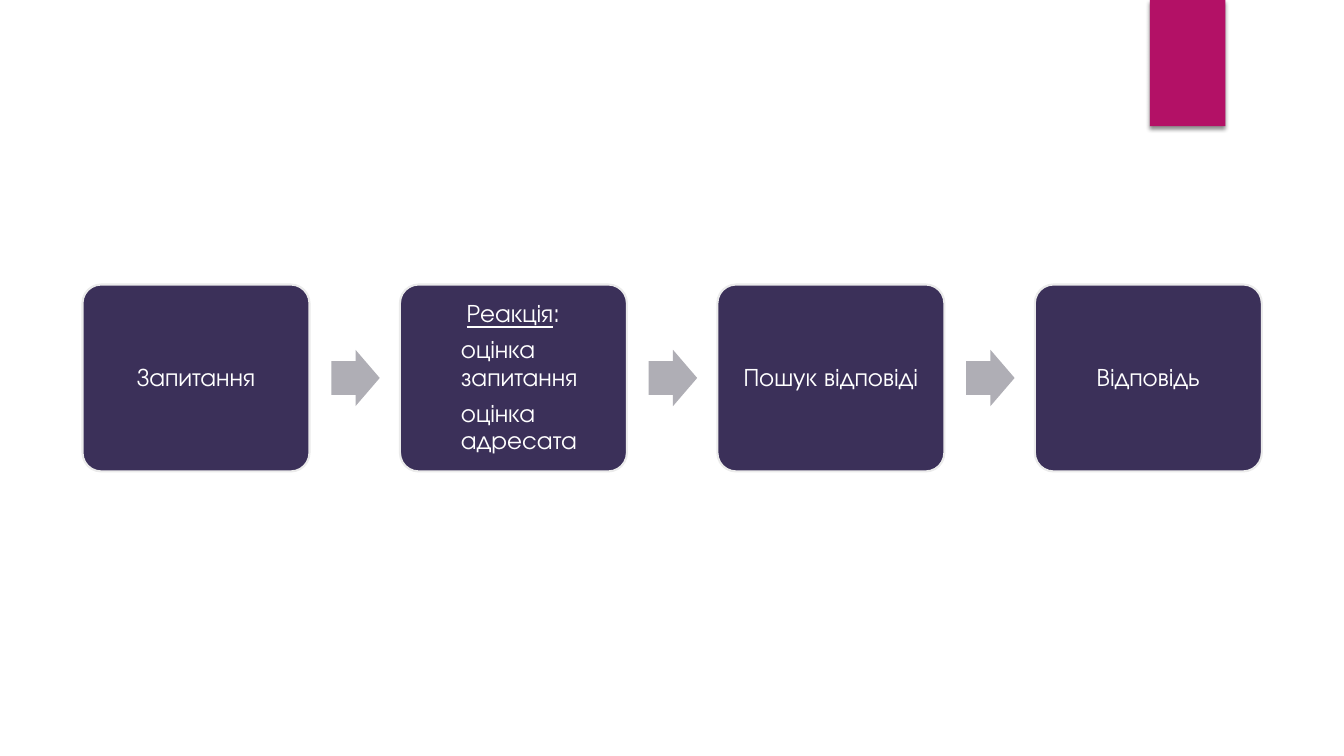
from lxml.etree import SubElement
from pptx import Presentation
from pptx.dml.color import RGBColor
from pptx.enum.shapes import MSO_SHAPE
from pptx.enum.text import MSO_ANCHOR, PP_ALIGN
from pptx.oxml.ns import qn
from pptx.util import Cm, Pt

# Each step: a heading as (text, underlined) runs, then indented lines
STEPS = [
    ([("Запитання", False)], []),
    ([("Реакція", True), (":", False)], ["оцінка запитання", "оцінка адресата"]),
    ([("Пошук відповіді", False)], []),
    ([("Відповідь", False)], []),
]
FONT = "TeX Gyre Adventor"
LEFT, TOP, PITCH = 2.08, 7.17, 8
BOX_W, BOX_H = 5.72, 4.71
ARROW_W, ARROW_H, ARROW_DX = 1.22, 1.42, 6.27


def paint(target, color):
    target.solid()
    target.fore_color.rgb = RGBColor.from_string(color)


def add_block(kind, x, y, w, h, color):
    block = slide.shapes.add_shape(kind, Cm(x), Cm(y), Cm(w), Cm(h))
    block.shadow.inherit = False
    paint(block.fill, color)
    block.line.fill.background()
    return block


def drop_shadow(shape):
    effects = shape._element.spPr.find(qn("a:effectLst"))
    outer = SubElement(effects, qn("a:outerShdw"), blurRad=str(Pt(3)),
                       dist=str(Pt(2)), dir="5400000", rotWithShape="0")
    black = SubElement(outer, qn("a:srgbClr"), val="000000")
    SubElement(black, qn("a:alpha"), val="45000")


def write(para, runs, indent=0):
    para.alignment = PP_ALIGN.LEFT if indent else PP_ALIGN.CENTER
    para.line_spacing = 0.9
    if indent:
        para.space_before = Pt(6.3)
        para._p.get_or_add_pPr().set("marL", str(Cm(indent)))
    for text, under in runs:
        run = para.add_run()
        run.text = text
        run.font.name = FONT
        run.font.size = Pt(18)
        run.font.underline = under
        paint(run.font.fill, "FFFFFF")


def add_step(x, head, items):
    box = add_block(MSO_SHAPE.ROUNDED_RECTANGLE, x, TOP, BOX_W, BOX_H, "3B3059")
    box.adjustments[0] = 0.1
    paint(box.line.fill, "EBEBEB")
    box.line.width = Pt(1.5)
    frame = box.text_frame
    frame.word_wrap = True
    frame.vertical_anchor = MSO_ANCHOR.MIDDLE
    frame.margin_left = frame.margin_right = Cm(0.18)
    frame.margin_top = frame.margin_bottom = Cm(0.18)
    write(frame.paragraphs[0], head)
    for item in items:
        write(frame.add_paragraph(), [(item, False)], indent=1.22)


deck = Presentation()
deck.slide_width, deck.slide_height = Cm(33.87), Cm(19.05)
slide = deck.slides.add_slide(deck.slide_layouts[6])

drop_shadow(add_block(MSO_SHAPE.RECTANGLE, 28.98, 0, 1.9, 3.18, "B31166"))

for i, (head, items) in enumerate(STEPS):
    x = LEFT + i * PITCH
    add_step(x, head, items)
    if i < len(STEPS) - 1:
        arrow = add_block(MSO_SHAPE.RIGHT_ARROW, x + ARROW_DX,
                          TOP + (BOX_H - ARROW_H) / 2, ARROW_W, ARROW_H, "AFAEB5")
        arrow.adjustments[0] = 0.6

deck.save("out.pptx")
